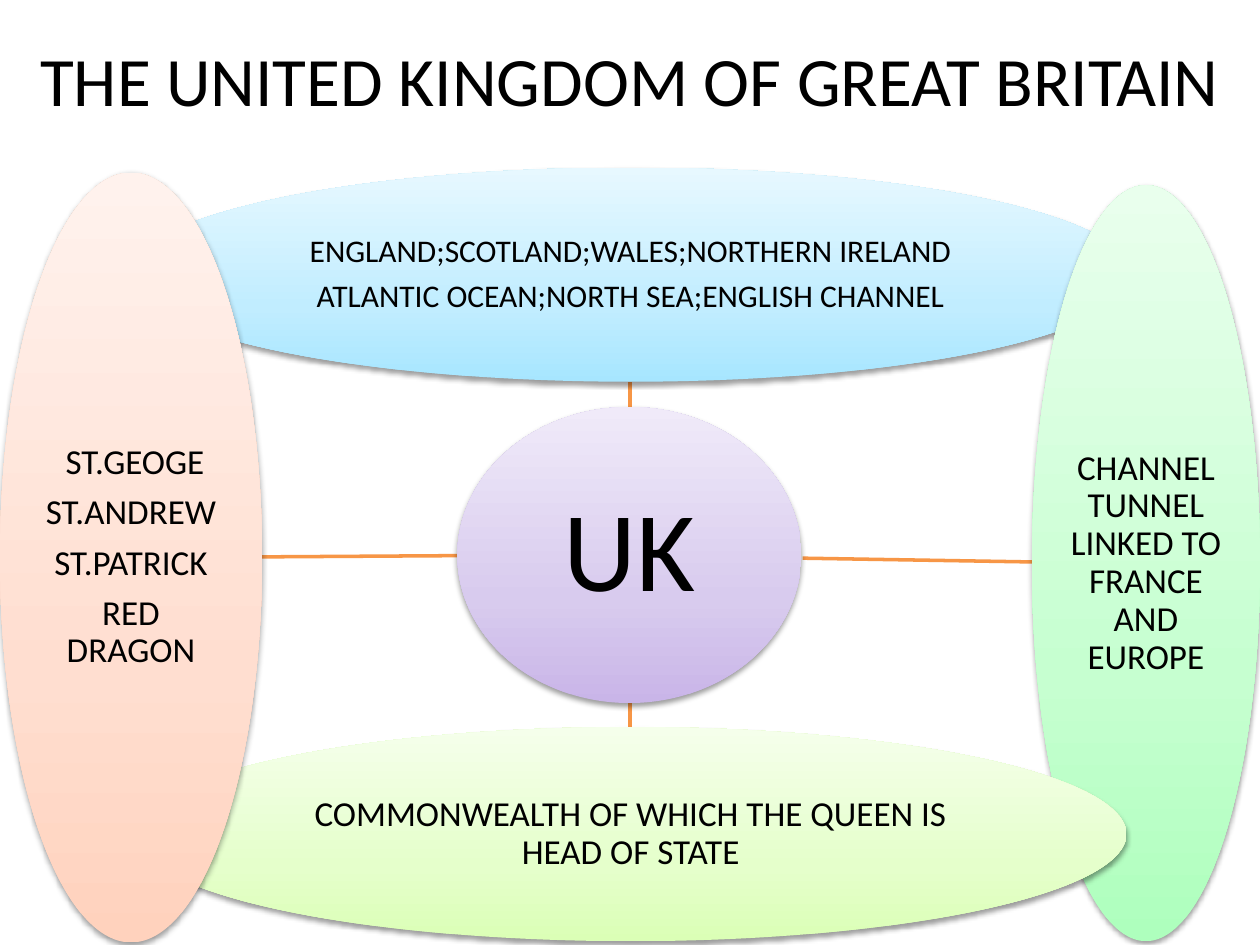
"""Build a slide of five ovals linked around a central UK hub."""
import copy

import pptx
import pptx.dml.color
import pptx.enum.shapes
import pptx.enum.text
import pptx.oxml
import pptx.oxml.ns
import pptx.util

Inches = pptx.util.Inches
Pt = pptx.util.Pt

COLORS = {
    "text": "000000",
    "link": "F79646",
    "purple": ("C9B5E8", "D8CBEE", "F0EAF9"),
    "blue": ("A7E6FF", "C1EDFF", "E7F8FF"),
    "green": ("AEFFBD", "C6FFD0", "E9FFED"),
    "lime": ("DBFFB6", "E5FFCB", "F5FFEB"),
    "peach": ("FFD2BD", "FFDED0", "FFF2ED"),
}
STOPS = (0, 0.35, 1)
SHADOW = (
    f'<a:outerShdw {pptx.oxml.ns.nsdecls("a")} blurRad="40000" dist="20000" '
    'dir="5400000" rotWithShape="0"><a:srgbClr val="000000">'
    '<a:alpha val="38000"/></a:srgbClr></a:outerShdw>'
)
OVALS = [
    ("purple", (3.63, 3.23, 2.73, 2.35), 0.05, 65, ["UK"]),
    ("blue", (1.02, 1.33, 7.97, 1.7), 0.01, 18,
     ["ENGLAND;SCOTLAND;WALES;NORTHERN IRELAND",
      "ATLANTIC OCEAN;NORTH SEA;ENGLISH CHANNEL"]),
    ("green", (8.19, 1.47, 1.81, 6), 0.01, 20,
     ["CHANNEL TUNNEL LINKED TO FRANCE AND EUROPE"]),
    ("lime", (1.07, 5.77, 7.87, 1.7), 0.01, 20,
     ["COMMONWEALTH OF WHICH THE QUEEN IS HEAD OF STATE"]),
    ("peach", (0, 1.37, 2.08, 6.11), 0.01, 20,
     [" ST.GEOGE", "ST.ANDREW", "ST.PATRICK", "RED DRAGON"]),
]
LINKS = [
    (5, 3.23, 5, 3.03),
    (6.37, 4.43, 8.19, 4.46),
    (5, 5.58, 5, 5.77),
    (3.63, 4.41, 2.08, 4.42),
]


def rgb(value):
    """Turn a hex string into a colour."""
    return pptx.dml.color.RGBColor.from_string(value)


def write_text(tf, lines, size, inset):
    """Fill a frame with centred paragraphs."""
    tf.text = "\n".join(lines)
    tf.word_wrap = True
    tf.vertical_anchor = pptx.enum.text.MSO_ANCHOR.MIDDLE
    tf.margin_left = tf.margin_right = Inches(inset)
    tf.margin_top = tf.margin_bottom = Inches(inset)
    for p in tf.paragraphs:
        p.alignment = pptx.enum.text.PP_ALIGN.CENTER
        for r in p.runs:
            r.font.name = "Calibri"
            r.font.size = Pt(size)
            r.font.color.rgb = rgb(COLORS["text"])


def add_title(s, text):
    """Add the heading across the top."""
    sp = s.shapes.add_textbox(0, 0, Inches(10), Inches(1.25))
    write_text(sp.text_frame, [text], 39.6, 0.05)


def fill_gradient(sp, colors):
    """Apply a vertical gradient, darkest at the bottom."""
    sp.fill.gradient()
    sp.fill.gradient_angle = 90
    gs_lst = sp._element.spPr.find(".//" + pptx.oxml.ns.qn("a:gsLst"))
    gs_lst.append(copy.deepcopy(gs_lst[0]))
    for stop, position, color in zip(sp.fill.gradient_stops, STOPS, colors):
        stop.position = position
        stop.color.rgb = rgb(color)


def add_oval(s, color, box, inset, size, lines):
    """Add a shaded oval with its text."""
    sp = s.shapes.add_shape(pptx.enum.shapes.MSO_SHAPE.OVAL, *map(Inches, box))
    fill_gradient(sp, COLORS[color])
    sp.line.fill.background()
    sp.shadow.inherit = False
    effects = sp._element.spPr.find(pptx.oxml.ns.qn("a:effectLst"))
    effects.append(pptx.oxml.parse_xml(SHADOW))
    write_text(sp.text_frame, lines, size, inset)
    for p in sp.text_frame.paragraphs:
        p.line_spacing = 0.9
        p.space_after = Pt(round(size * 0.35, 1))


def add_link(s, ends):
    """Add a line from the hub to an outer oval."""
    link = s.shapes.add_connector(
        pptx.enum.shapes.MSO_CONNECTOR.STRAIGHT, *map(Inches, ends))
    link.line.color.rgb = rgb(COLORS["link"])
    link.line.width = Pt(2)
    link._element.spPr.append(pptx.oxml.parse_xml(
        f'<a:effectLst {pptx.oxml.ns.nsdecls("a")}/>'))


def main():
    """Build and save the slide."""
    prs = pptx.Presentation()
    prs.slide_width, prs.slide_height = Inches(10), Inches(7.5)
    s = prs.slides.add_slide(prs.slide_layouts[6])
    add_title(s, "THE UNITED KINGDOM OF GREAT BRITAIN")
    for ends in LINKS:
        add_link(s, ends)
    for oval in OVALS:
        add_oval(s, *oval)
    prs.save("out.pptx")


if __name__ == "__main__":
    main()
